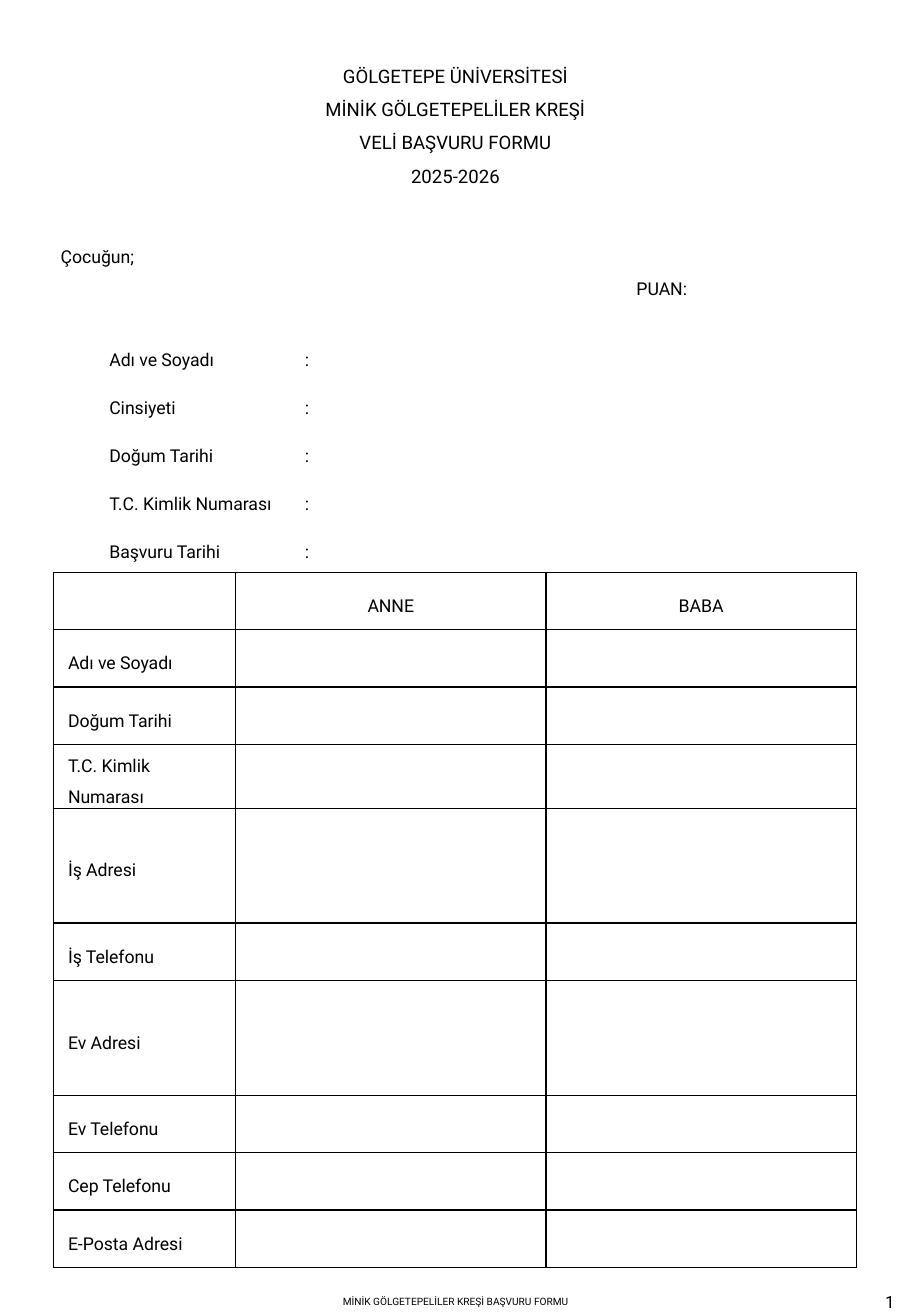
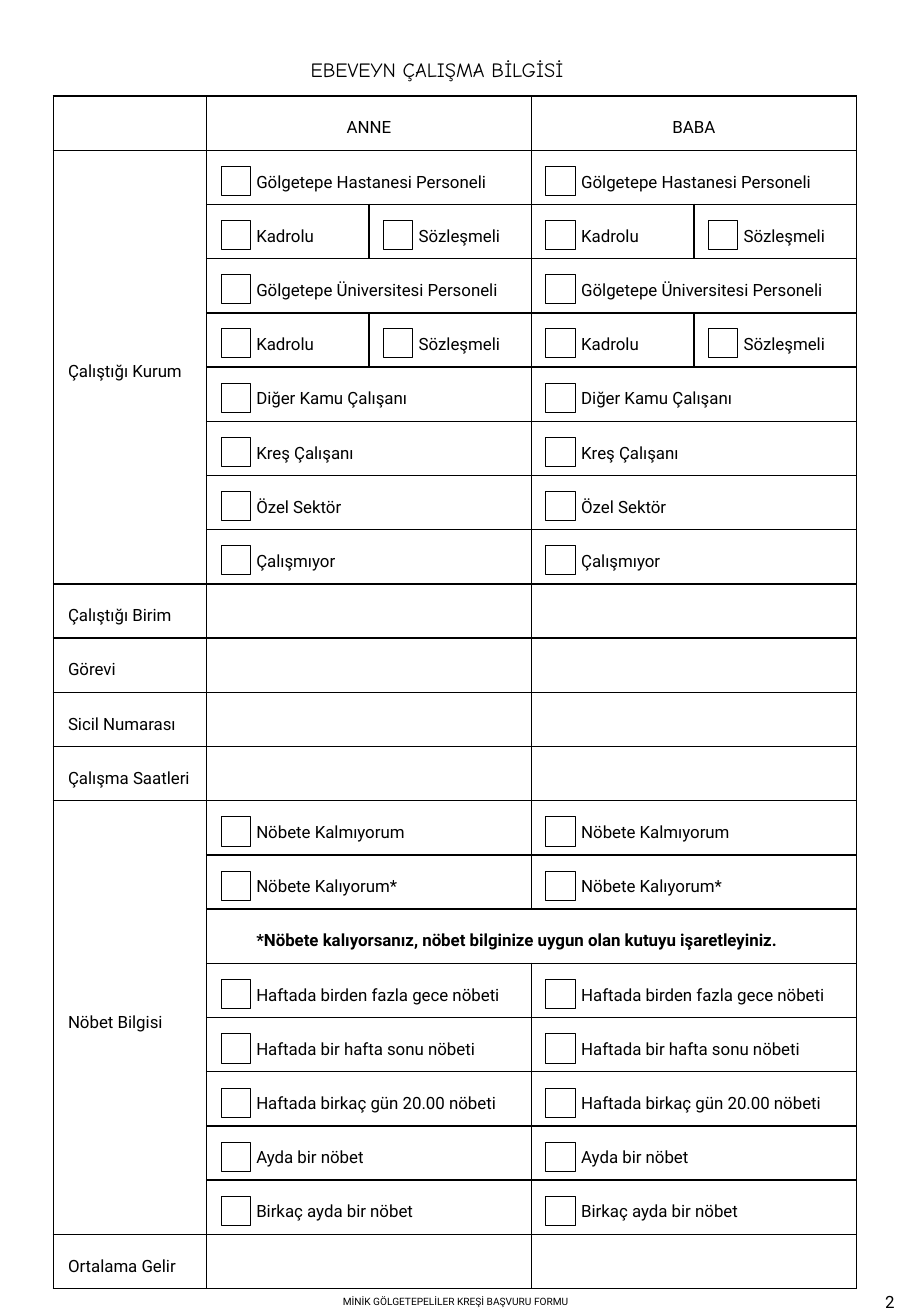
from lxml import etree
from pptx import Presentation
from pptx.dml.color import RGBColor
from pptx.enum.shapes import MSO_SHAPE
from pptx.enum.text import MSO_ANCHOR, PP_ALIGN
from pptx.oxml.ns import qn
from pptx.util import Inches, Pt

LEFT, CENTER = PP_ALIGN.LEFT, PP_ALIGN.CENTER
TOP, MIDDLE = MSO_ANCHOR.TOP, MSO_ANCHOR.MIDDLE
RECT = MSO_SHAPE.RECTANGLE

# Shared style
WIDTH, HEIGHT = 7.5, 10.83
INK, PAPER = "000000", "FFFFFF"
FONT, TITLE_FONT = "Roboto", "Comic Neue"
EDGE, WIDE = 0.44, 6.61
FOOTER = "MİNİK GÖLGETEPELİLER KREŞİ BAŞVURU FORMU"
PARENTS = ("ANNE", "BABA")


def color(code):
    return RGBColor.from_string(code)


def style(para, size, font=FONT, align=LEFT, bold=False, spacing=None):
    para.alignment = align
    if spacing:
        para.line_spacing = spacing
    para.font.name = font
    para.font.size = Pt(size)
    para.font.bold = bold
    para.font.color.rgb = color(INK)


def add_text(slide, box, lines, size, **look):
    frame = slide.shapes.add_textbox(*map(Inches, box)).text_frame
    frame.word_wrap = True
    frame.text = "\n".join(lines)
    for para in frame.paragraphs:
        style(para, size, **look)


def add_footer(slide, number):
    add_text(slide, (0, 10.61, WIDTH, 0.2), [FOOTER], 6, align=CENTER)
    add_text(slide, (7.15, 10.58, 0.35, 0.27), [str(number)], 10, align=CENTER)


# Tables
def add_border(cell):
    props = cell._tc.get_or_add_tcPr()
    for spot, side in enumerate(("lnL", "lnR", "lnT", "lnB")):
        line = etree.Element(qn("a:" + side), w=str(Pt(1)))
        fill = etree.SubElement(line, qn("a:solidFill"))
        etree.SubElement(fill, qn("a:srgbClr"), val=INK)
        props.insert(spot, line)


def add_grid(slide, left, top, cols, rows, size, border=True):
    box = map(Inches, (left, top, sum(cols), sum(rows)))
    table = slide.shapes.add_table(len(rows), len(cols), *box).table
    table.first_row = table.horz_banding = False
    for col, width in zip(table.columns, cols):
        col.width = Inches(width)
    for row, height in zip(table.rows, rows):
        row.height = Inches(height)
    for cell in table.iter_cells():
        cell.fill.background()
        put(cell, "", size)
        if border:
            add_border(cell)
    return table


def put(cell, text, size, inset=0.12, indent=0, anchor=MIDDLE, **look):
    cell.margin_left, cell.margin_right = Inches(inset), Inches(0.05)
    cell.margin_top = cell.margin_bottom = 0
    cell.vertical_anchor = anchor
    cell.text = text
    para = cell.text_frame.paragraphs[0]
    style(para, size, spacing=1.5, **look)
    para._p.get_or_add_pPr().set("marL", str(Inches(indent)))


# Slide 1: child and parents
CHILD = ("Adı ve Soyadı", "Cinsiyeti", "Doğum Tarihi",
         "T.C. Kimlik Numarası", "Başvuru Tarihi")
DETAILS = (("Adı ve Soyadı", 1), ("Doğum Tarihi", 1),
           ("T.C. Kimlik Numarası", 1), ("İş Adresi", 2),
           ("İş Telefonu", 1), ("Ev Adresi", 2), ("Ev Telefonu", 1),
           ("Cep Telefonu", 1), ("E-Posta Adresi", 1))


def add_child(slide, left, top):
    size, inset = 10.5, 0.06
    rows = [0.39, 0.78] + [0.395] * len(CHILD)
    table = add_grid(slide, left, top, (2.01, 4.6), rows, size, border=False)
    put(table.cell(1, 0), "Çocuğun;", size, inset, anchor=TOP)
    put(table.cell(1, 1), "PUAN:", size, inset, indent=2.73)
    for row, label in enumerate(CHILD, 2):
        put(table.cell(row, 0), label, size, inset, indent=0.4)
        put(table.cell(row, 1), ":", size, inset)


def add_details(slide, left, top):
    size, unit, first = 10.5, 0.4725, 1.5
    half = (WIDE - first) / 2
    rows = [unit] + [unit * units for _, units in DETAILS]
    table = add_grid(slide, left, top, (first, half, half), rows, size)
    for col, name in enumerate(PARENTS, 1):
        put(table.cell(0, col), name, size, 0.05, align=CENTER)
    for row, (label, _) in enumerate(DETAILS, 1):
        put(table.cell(row, 0), label, size)


def build_form(slide):
    lines = ("GÖLGETEPE ÜNİVERSİTESİ", "MİNİK GÖLGETEPELİLER KREŞİ",
             "VELİ BAŞVURU FORMU", "2025-2026")
    add_text(slide, (0, 0.39, WIDTH, 1.21), lines, 11, align=CENTER, spacing=1.5)
    add_child(slide, EDGE, 1.56)
    add_details(slide, EDGE, 4.71)


# Slide 2: work of the parents
STAFF = ("Kadrolu", "Sözleşmeli")
NOTE = "*Nöbete kalıyorsanız, nöbet bilginize uygun olan kutuyu işaretleyiniz."
# Each group: label and its rows; a row has one choice, two, or none
WORK = (
    ("Çalıştığı Kurum", (
        ("Gölgetepe Hastanesi Personeli",), STAFF,
        ("Gölgetepe Üniversitesi Personeli",), STAFF,
        ("Diğer Kamu Çalışanı",), ("Kreş Çalışanı",),
        ("Özel Sektör",), ("Çalışmıyor",))),
    ("Çalıştığı Birim", ((),)),
    ("Görevi", ((),)),
    ("Sicil Numarası", ((),)),
    ("Çalışma Saatleri", ((),)),
    ("Nöbet Bilgisi", (
        ("Nöbete Kalmıyorum",), ("Nöbete Kalıyorum*",), (NOTE,),
        ("Haftada birden fazla gece nöbeti",),
        ("Haftada bir hafta sonu nöbeti",),
        ("Haftada birkaç gün 20.00 nöbeti",),
        ("Ayda bir nöbet",), ("Birkaç ayda bir nöbet",))),
    ("Ortalama Gelir", ((),)),
)


def add_check(slide, left, top):
    side = Inches(0.24)
    box = slide.shapes.add_shape(RECT, Inches(left), Inches(top), side, side)
    box.shadow.inherit = False
    box.fill.solid()
    box.fill.fore_color.rgb = color(PAPER)
    box.line.color.rgb = color(INK)
    box.line.width = Pt(0.5)


def add_work(slide, left, top):
    size, unit, first, indent = 10, 9.82 / 22, 1.26, 0.29
    half = (WIDE - first) / 4
    count = 1 + sum(len(rows) for _, rows in WORK)
    table = add_grid(slide, left, top, [first] + [half] * 4,
                     [unit] * count, size)

    def join(row, col, last):
        table.cell(row, col).merge(table.cell(row, last))

    for col, name in zip((1, 3), PARENTS):
        join(0, col, col + 1)
        put(table.cell(0, col), name, size, 0.05, align=CENTER)
    row = 1
    for label, rows in WORK:
        if len(rows) > 1:
            table.cell(row, 0).merge(table.cell(row + len(rows) - 1, 0))
        put(table.cell(row, 0), label, size)
        for picks in rows:
            if picks == (NOTE,):
                join(row, 1, 4)
                put(table.cell(row, 1), NOTE, size, indent=indent, bold=True)
                row += 1
                continue
            for start in (1, 3):
                if len(picks) < 2:
                    join(row, start, start + 1)
                for col, pick in enumerate(picks, start):
                    put(table.cell(row, col), pick, size, indent=indent)
                    add_check(slide, left + first + half * (col - 1) + 0.12,
                              top + unit * row + 0.13)
            row += 1


def build_work(slide):
    add_work(slide, EDGE, 0.79)
    add_text(slide, (2.46, 0.42, 2.57, 0.3), ["EBEVEYN ÇALIŞMA BİLGİSİ"],
             12, font=TITLE_FONT)


def main():
    deck = Presentation()
    deck.slide_width, deck.slide_height = Inches(WIDTH), Inches(HEIGHT)
    for number, build in enumerate((build_form, build_work), 1):
        slide = deck.slides.add_slide(deck.slide_layouts[6])
        build(slide)
        add_footer(slide, number)
    deck.save("out.pptx")


if __name__ == "__main__":
    main()
